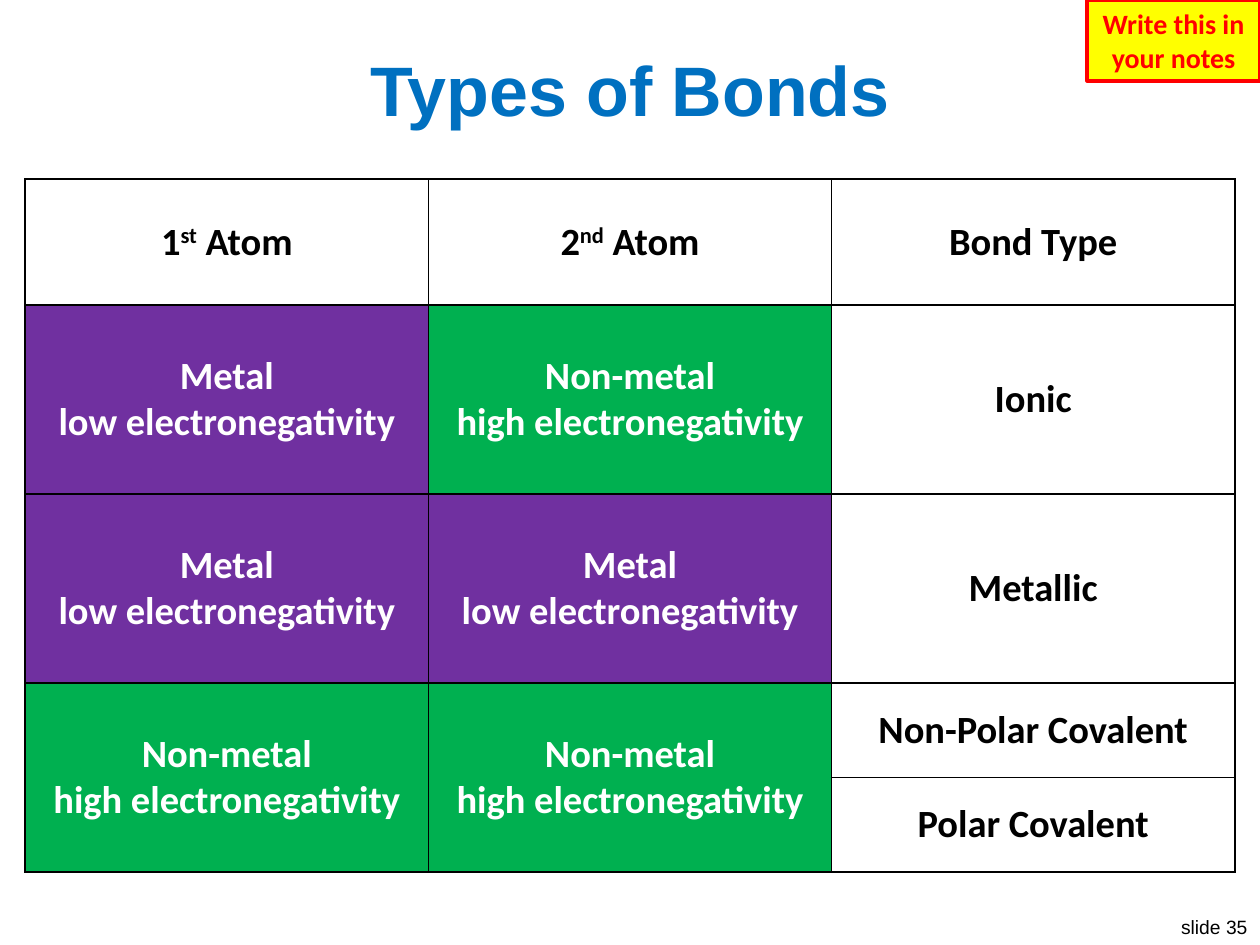
from lxml.etree import SubElement
from pptx import Presentation
from pptx.dml.color import RGBColor
from pptx.enum.shapes import MSO_SHAPE
from pptx.enum.text import MSO_ANCHOR, PP_ALIGN
from pptx.oxml.ns import qn
from pptx.util import Inches, Pt

BLACK = RGBColor(0x00, 0x00, 0x00)
WHITE = RGBColor(0xFF, 0xFF, 0xFF)
BLUE = RGBColor(0x00, 0x70, 0xC0)
PURPLE = RGBColor(0x70, 0x30, 0xA0)
GREEN = RGBColor(0x00, 0xB0, 0x50)
RED = RGBColor(0xFF, 0x00, 0x00)
YELLOW = RGBColor(0xFF, 0xFF, 0x00)

METAL = "Metal\nlow electronegativity"
NON_METAL = "Non-metal\nhigh electronegativity"
ATOM_FILLS = {METAL: PURPLE, NON_METAL: GREEN}

BONDS = [
    (METAL, NON_METAL, "Ionic"),
    (METAL, METAL, "Metallic"),
    (NON_METAL, NON_METAL, "Non-Polar Covalent"),
    ("", "", "Polar Covalent"),
]
ROW_HEIGHTS = [1, 1.5, 1.5, 0.75, 0.75]


def style_text(frame, font_name, size, color, bold=True, align=PP_ALIGN.CENTER):
    for paragraph in frame.paragraphs:
        paragraph.alignment = align
        font = paragraph.font
        font.name, font.size, font.bold = font_name, Pt(size), bold
        font.color.rgb = color


def add_label(slide, box, text, size, color, bold, align, wrap):
    frame = slide.shapes.add_textbox(*map(Inches, box)).text_frame
    frame.word_wrap = wrap
    frame.vertical_anchor = MSO_ANCHOR.MIDDLE
    frame.text = text
    style_text(frame, "Arial", size, color, bold, align)


def add_note(slide, box):
    note = slide.shapes.add_shape(MSO_SHAPE.RECTANGLE, *map(Inches, box))
    note.shadow.inherit = False
    note.fill.solid()
    note.fill.fore_color.rgb = YELLOW
    note.line.color.rgb = RED
    note.line.width = Pt(2.25)
    note.text_frame.word_wrap = True
    note.text_frame.text = "Write this in your notes"
    style_text(note.text_frame, "Calibri", 16, RED)


def add_borders(cell):
    properties = cell._tc.get_or_add_tcPr()
    for side in ("a:lnL", "a:lnR", "a:lnT", "a:lnB"):
        border = SubElement(properties, qn(side), w=str(Pt(1)))
        fill = SubElement(border, qn("a:solidFill"))
        SubElement(fill, qn("a:srgbClr"), val=str(BLACK))


def style_cell(cell, fill_color=None):
    add_borders(cell)
    cell.vertical_anchor = MSO_ANCHOR.MIDDLE
    if fill_color is None:
        cell.fill.background()
    else:
        cell.fill.solid()
        cell.fill.fore_color.rgb = fill_color
    style_text(cell.text_frame, "Calibri", 22, WHITE if fill_color else BLACK)


def write_ordinal_heading(cell, number, suffix):
    paragraph = cell.text_frame.paragraphs[0]
    for text in (number, suffix, " Atom"):
        run = paragraph.add_run()
        run.text = text
        if text == suffix:
            run.font._element.set("baseline", "30000")


def add_bond_table(slide, box):
    table = slide.shapes.add_table(len(ROW_HEIGHTS), 3, *map(Inches, box)).table
    table.first_row = table.horz_banding = False
    for row, height in zip(table.rows, ROW_HEIGHTS):
        row.height = Inches(height)

    write_ordinal_heading(table.cell(0, 0), "1", "st")
    write_ordinal_heading(table.cell(0, 1), "2", "nd")
    table.cell(0, 2).text = "Bond Type"
    for column in range(3):
        style_cell(table.cell(0, column))

    for row, bond in enumerate(BONDS, start=1):
        for column, text in enumerate(bond):
            cell = table.cell(row, column)
            cell.text = text
            style_cell(cell, ATOM_FILLS.get(text))
    for column in range(2):
        table.cell(3, column).merge(table.cell(4, column))


def main():
    presentation = Presentation()
    presentation.slide_width = Inches(10)
    presentation.slide_height = Inches(7.5)
    slide = presentation.slides.add_slide(presentation.slide_layouts[6])
    add_label(slide, (9.25, 7.21, 0.75, 0.29), "slide 35", 11, BLACK,
              False, PP_ALIGN.RIGHT, False)
    add_label(slide, (0.2, 0.3, 9.6, 0.8), "Types of Bonds", 40, BLUE,
              True, PP_ALIGN.CENTER, True)
    add_bond_table(slide, (0.2, 1.42, 9.6, 5.5))
    add_note(slide, (8.63, 0, 1.37, 0.64))
    presentation.save("out.pptx")


if __name__ == "__main__":
    main()
